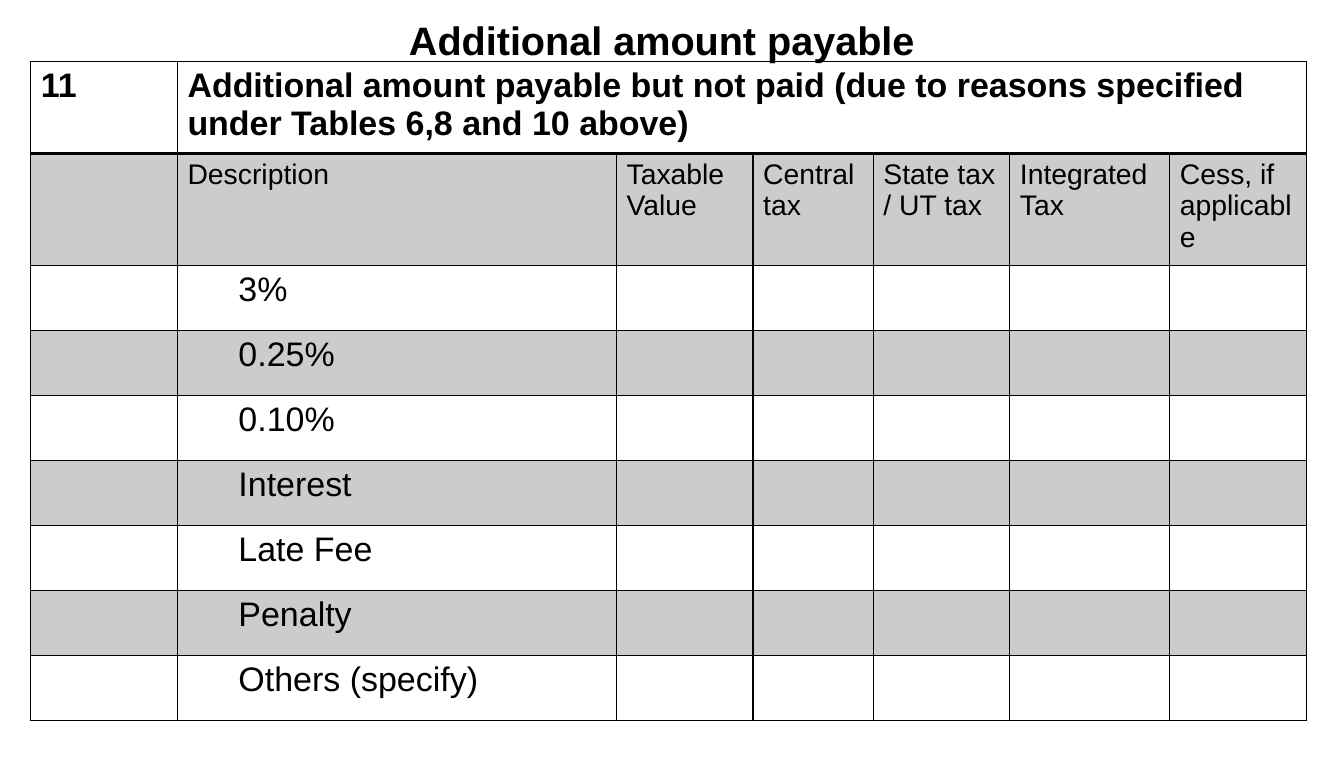
from dataclasses import dataclass

from lxml import etree
from pptx import Presentation
from pptx.dml.color import RGBColor
from pptx.enum import text
from pptx.oxml import ns
from pptx.util import Pt

COLORS = {"ink": "000000"}
FONT = "Arial"
SHADE_ALPHA = 20
COLUMN_WIDTHS = [103.7, 310.3, 96.5, 85, 96.5, 113, 96.5]


@dataclass(frozen=True)
class Row:
    texts: tuple[str, ...]
    height: float = 46
    size: float = 24
    bold: bool = False
    shaded: bool = False
    indent: float = 0
    bottom_line: float = 1


HEADING = Row(
    ("11", "Additional amount payable but not paid (due to reasons specified "
           "under Tables 6,8 and 10 above)"),
    height=65, bold=True, bottom_line=2)
COLUMN_TITLES = Row(
    ("", "Description", "Taxable Value", "Central tax", "State tax / UT tax",
     "Integrated Tax", "Cess, if applicable"),
    height=79, size=20, shaded=True)
DESCRIPTIONS = ("3%", "0.25%", "0.10%", "Interest", "Late Fee", "Penalty",
                "Others (specify)")
ROWS = [HEADING, COLUMN_TITLES] + [
    Row(("", description), shaded=index % 2 == 1, indent=36)
    for index, description in enumerate(DESCRIPTIONS)]


def add_run(paragraph, words: str, size: float, bold: bool) -> None:
    run = paragraph.add_run()
    run.text = words
    run.font.name = FONT
    run.font.size = Pt(size)
    run.font.bold = bold
    run.font.color.rgb = RGBColor.from_string(COLORS["ink"])


def add_border(cell, side: str, width: float) -> None:
    line = etree.SubElement(cell._tc.get_or_add_tcPr(), ns.qn(f"a:ln{side}"),
                            w=str(Pt(width)))
    fill = etree.SubElement(line, ns.qn("a:solidFill"))
    etree.SubElement(fill, ns.qn("a:srgbClr"), val=COLORS["ink"])


def shade(cell) -> None:
    """Fill the cell with see-through ink."""
    cell.fill.solid()
    cell.fill.fore_color.rgb = RGBColor.from_string(COLORS["ink"])
    ink = cell._tc.tcPr.find(".//" + ns.qn("a:solidFill") + "[last()]")
    ink = cell._tc.tcPr.find(ns.qn("a:solidFill")).find(ns.qn("a:srgbClr"))
    etree.SubElement(ink, ns.qn("a:alpha"), val=str(SHADE_ALPHA * 1000))


def fill_cell(cell, row: Row, words: str) -> None:
    for side, width in (("L", 1), ("R", 1), ("T", 1), ("B", row.bottom_line)):
        add_border(cell, side, width)
    if row.shaded:
        shade(cell)
    else:
        cell.fill.background()
    if words:
        paragraph = cell.text_frame.paragraphs[0]
        if row.indent:
            properties = paragraph._p.get_or_add_pPr()
            properties.set("marL", str(Pt(row.indent)))
            properties.set("indent", "0")
        add_run(paragraph, words, row.size, row.bold)


def add_payable_table(slide) -> None:
    payable = slide.shapes.add_table(
        len(ROWS), len(COLUMN_WIDTHS), Pt(21.6), Pt(43.5),
        Pt(sum(COLUMN_WIDTHS)), Pt(sum(row.height for row in ROWS))).table
    payable.first_row = payable.horz_banding = False
    for column, width in zip(payable.columns, COLUMN_WIDTHS):
        column.width = Pt(width)
    payable.cell(0, 1).merge(payable.cell(0, len(COLUMN_WIDTHS) - 1))
    for row, table_row in zip(ROWS, payable.rows):
        table_row.height = Pt(row.height)
        for index, cell in enumerate(table_row.cells):
            fill_cell(cell, row, row.texts[index] if index < len(row.texts) else "")


def add_title(slide) -> None:
    title = slide.shapes.add_textbox(Pt(32.4), Pt(8), Pt(870.5), Pt(41)).text_frame
    title.word_wrap = True
    title.auto_size = text.MSO_AUTO_SIZE.SHAPE_TO_FIT_TEXT
    paragraph = title.paragraphs[0]
    paragraph.alignment = text.PP_ALIGN.CENTER
    add_run(paragraph, "Additional amount payable", 28, True)


def main() -> None:
    deck = Presentation()
    deck.slide_width, deck.slide_height = Pt(949.7), Pt(540)
    slide = deck.slides.add_slide(deck.slide_layouts[6])
    add_payable_table(slide)
    add_title(slide)
    deck.save("out.pptx")


if __name__ == "__main__":
    main()
